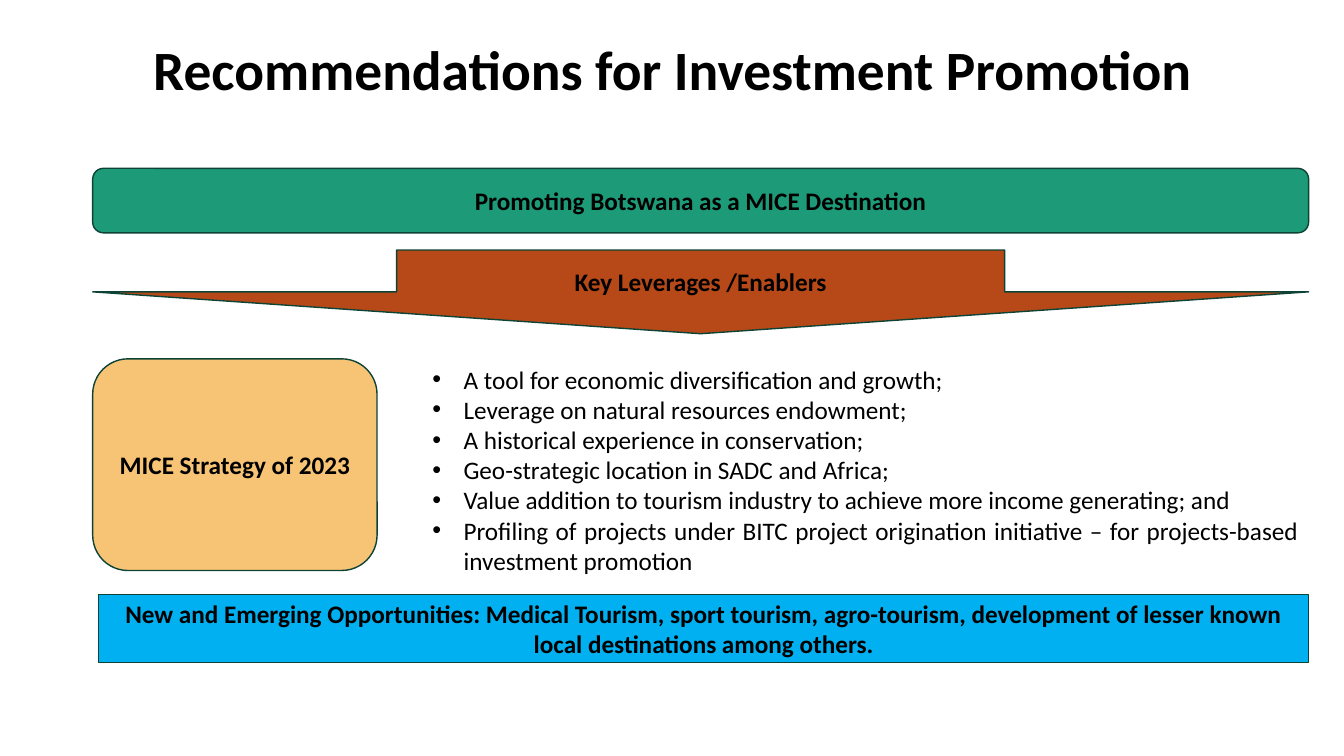
from dataclasses import dataclass

from lxml.etree import SubElement
from pptx import Presentation
from pptx.dml.color import RGBColor
from pptx.enum.shapes import MSO_SHAPE
from pptx.enum.text import MSO_ANCHOR, MSO_AUTO_SIZE, PP_ALIGN
from pptx.oxml.ns import qn
from pptx.util import Inches, Pt

FONT = "Calibri"
BLACK = RGBColor(0x00, 0x00, 0x00)
OUTLINE = RGBColor(0x0D, 0x43, 0x35)
GREEN = RGBColor(0x1D, 0x9A, 0x78)
RUST = RGBColor(0xB7, 0x49, 0x19)
SAND = RGBColor(0xF7, 0xC4, 0x75)
BLUE = RGBColor(0x00, 0xB0, 0xF0)

# Lengths are percentages of the slide's width and height
SLIDE_W, SLIDE_H = Inches(13.33), Inches(7.5)
LEFT, RIGHT = 6.9, 97.37
STRATEGY_TOP = 47.47
BULLET_INDENT = Inches(0.31)


@dataclass(frozen=True)
class Area:
    left: float
    top: float
    width: float
    height: float

    def emu(self) -> tuple[int, int, int, int]:
        return (round(SLIDE_W * self.left / 100), round(SLIDE_H * self.top / 100),
                round(SLIDE_W * self.width / 100), round(SLIDE_H * self.height / 100))


@dataclass(frozen=True)
class Block:
    shape: MSO_SHAPE
    area: Area
    fill: RGBColor
    text: str


TITLE = "Recommendations for Investment Promotion"
TITLE_AREA = Area(LEFT, 5.33, 86.27, 8.53)

BLOCKS = [
    Block(MSO_SHAPE.ROUNDED_RECTANGLE, Area(LEFT, 22.27, RIGHT - LEFT, 8.53), GREEN,
          "Promoting Botswana as a MICE Destination"),
    Block(MSO_SHAPE.DOWN_ARROW, Area(LEFT, 33.07, RIGHT - LEFT, 11.07), RUST,
          "Key Leverages /Enablers"),
    Block(MSO_SHAPE.ROUNDED_RECTANGLE, Area(LEFT, STRATEGY_TOP, 21.16, 28), SAND,
          "MICE Strategy of 2023"),
    Block(MSO_SHAPE.RECTANGLE, Area(7.35, 78.67, RIGHT - 7.35, 8.93), BLUE,
          "New and Emerging Opportunities: Medical Tourism, sport tourism, agro-tourism, "
          "development of lesser known local destinations among others."),
]

ENABLERS_AREA = Area(31.43, STRATEGY_TOP, RIGHT - 31.43, 29.6)
ENABLERS = [
    "A tool for economic diversification and growth;",
    "Leverage on natural resources endowment;",
    "A historical experience in conservation;",
    "Geo-strategic location in SADC and Africa;",
    "Value addition to tourism industry to achieve more income generating; and",
    "Profiling of projects under BITC project origination initiative – "
    "for projects-based investment promotion",
]


def format_paragraph(p, align: PP_ALIGN, size: float = 18, bold: bool = False) -> None:
    p.alignment = align
    for r in p.runs:
        r.font.name = FONT
        r.font.size = Pt(size)
        r.font.bold = bold
        r.font.color.rgb = BLACK


def add_bullet(p) -> None:
    pPr = p._p.get_or_add_pPr()
    pPr.set("marL", str(BULLET_INDENT))
    pPr.set("indent", str(-BULLET_INDENT))
    SubElement(pPr, qn("a:buFont")).set("typeface", "Arial")
    SubElement(pPr, qn("a:buChar")).set("char", "•")


def set_title(slide) -> None:
    sp = slide.shapes.title
    sp.left, sp.top, sp.width, sp.height = TITLE_AREA.emu()
    tf = sp.text_frame
    tf.text = TITLE
    tf.word_wrap = True
    tf.auto_size = MSO_AUTO_SIZE.NONE
    tf.vertical_anchor = MSO_ANCHOR.MIDDLE
    p = tf.paragraphs[0]
    p.line_spacing = 0.9
    format_paragraph(p, PP_ALIGN.CENTER, 39.6, bold=True)


def add_block(slide, block: Block) -> None:
    sp = slide.shapes.add_shape(block.shape, *block.area.emu())
    sp.shadow.inherit = False
    sp.fill.solid()
    sp.fill.fore_color.rgb = block.fill
    sp.line.color.rgb = OUTLINE
    sp.line.width = Pt(1)
    tf = sp.text_frame
    tf.text = block.text
    tf.word_wrap = True
    tf.vertical_anchor = MSO_ANCHOR.MIDDLE
    format_paragraph(tf.paragraphs[0], PP_ALIGN.CENTER, bold=True)


def add_enablers(slide) -> None:
    tf = slide.shapes.add_textbox(*ENABLERS_AREA.emu()).text_frame
    tf.text = "\n".join(ENABLERS)
    tf.word_wrap = True
    tf.auto_size = MSO_AUTO_SIZE.SHAPE_TO_FIT_TEXT
    for p in tf.paragraphs:
        add_bullet(p)
        format_paragraph(p, PP_ALIGN.JUSTIFY)


def main() -> None:
    prs = Presentation()
    prs.slide_width, prs.slide_height = SLIDE_W, SLIDE_H
    slide = prs.slides.add_slide(prs.slide_layouts[5])

    # Heading
    set_title(slide)

    # Banner, arrow, strategy box and opportunities bar
    for block in BLOCKS:
        add_block(slide, block)

    # Bulleted list beside the strategy box
    add_enablers(slide)

    prs.save("out.pptx")


if __name__ == "__main__":
    main()
